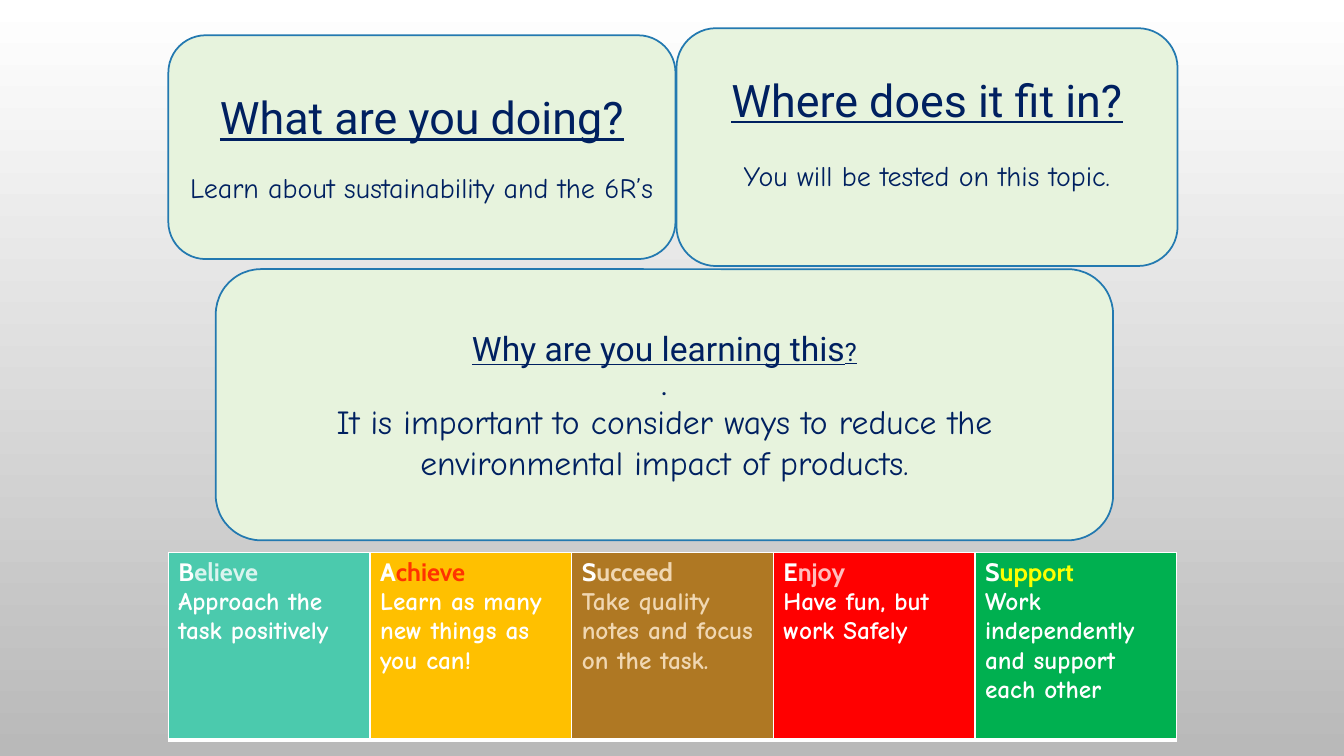
from dataclasses import dataclass

from lxml import etree
from pptx import Presentation
from pptx.dml.color import RGBColor
from pptx.enum.shapes import MSO_SHAPE
from pptx.enum.text import MSO_ANCHOR, PP_ALIGN
from pptx.oxml.ns import qn
from pptx.util import Inches, Pt

ROUNDED = MSO_SHAPE.ROUNDED_RECTANGLE
MIDDLE = MSO_ANCHOR.MIDDLE
CENTER = PP_ALIGN.CENTER

HEADING_FONT = "Roboto"
BODY_FONT = "Comic Neue"
VALUE_FONT = "Cabin"
NAVY = "002060"
WHITE = "FFFFFF"
PANEL_FILL = "E7F3DD"
PANEL_LINE = "2379B0"


@dataclass
class Span:
    text: str
    size: float
    font: str = HEADING_FONT
    color: str = NAVY
    underline: bool = False
    bold: bool = False


@dataclass
class Line:
    spans: list[Span]
    space_before: float = 0


@dataclass
class Panel:
    left: float
    top: float
    width: float
    height: float
    lines: list[Line]
    bottom_inset: float = 0.05


@dataclass
class Value:
    word: str
    word_color: str
    advice: str
    fill: str
    advice_color: str = WHITE


PANELS = [
    Panel(1.67, 0.35, 5.03, 2.22, [
        Line([Span("What are you doing?", 32, underline=True)]),
        Line([Span("Learn about sustainability and the 6R’s", 20, BODY_FONT)], 19),
    ]),
    Panel(6.71, 0.28, 4.97, 2.36, [
        Line([Span("Where does it fit in?", 32, underline=True)]),
        Line([Span("You will be tested on this topic.", 20, BODY_FONT)], 23),
    ], bottom_inset=0.34),
    Panel(2.14, 2.67, 8.9, 2.69, [
        Line([Span("Why are you learning this", 24, underline=True),
              Span("?", 18, underline=True)]),
        Line([Span(".", 20)]),
        Line([Span("It is important to consider ways to reduce the "
                   "environmental impact of products.", 24, BODY_FONT)]),
    ]),
]

VALUES = [
    Value("Believe", "DBF4EF", "Approach the task positively", "4BCAAD"),
    Value("Achieve", "FF3300", "Learn as many new things as you can!", "FFC000"),
    Value("Succeed", "F0D7B2", "Take quality notes and focus on the task.",
          "AF7823", advice_color="F0D7B2"),
    Value("Enjoy", "FFBDBD", "Have fun, but work Safely", "FF0000"),
    Value("Support", "FFFF00", "Work independently and support each other", "00B050"),
]


def rgb(color: str) -> RGBColor:
    return RGBColor.from_string(color)


def write_lines(frame, lines: list[Line], align=None) -> None:
    frame.word_wrap = True
    frame.text = "\n".join("" for _ in lines)
    for paragraph, line in zip(frame.paragraphs, lines):
        paragraph.alignment = align
        if line.space_before:
            paragraph.space_before = Pt(line.space_before)
        for span in line.spans:
            run = paragraph.add_run()
            run.text = span.text
            run.font.size = Pt(span.size)
            run.font.name = span.font
            run.font.color.rgb = rgb(span.color)
            run.font.underline = span.underline
            run.font.bold = span.bold


def add_panel(slide, panel: Panel) -> None:
    box = slide.shapes.add_shape(ROUNDED, Inches(panel.left), Inches(panel.top),
                                 Inches(panel.width), Inches(panel.height))
    box.shadow.inherit = False
    box.fill.solid()
    box.fill.fore_color.rgb = rgb(PANEL_FILL)
    box.line.color.rgb = rgb(PANEL_LINE)
    box.line.width = Pt(1.25)
    box.text_frame.vertical_anchor = MIDDLE
    box.text_frame.margin_bottom = Inches(panel.bottom_inset)
    write_lines(box.text_frame, panel.lines, CENTER)


def set_borders(cell) -> None:
    """Give the cell white borders, with a heavier one at the bottom."""
    properties = cell._tc.get_or_add_tcPr()
    for index, (side, width) in enumerate([("L", 1), ("R", 1), ("T", 1), ("B", 3)]):
        border = etree.Element(qn(f"a:ln{side}"), w=str(Pt(width)))
        fill = etree.SubElement(border, qn("a:solidFill"))
        etree.SubElement(fill, qn("a:srgbClr"), val=WHITE)
        properties.insert(index, border)


def add_values_table(slide, values: list[Value]) -> None:
    table = slide.shapes.add_table(1, len(values), Inches(1.67), Inches(5.48),
                                   Inches(10), Inches(1.86)).table
    for cell, value in zip(table.rows[0].cells, values):
        cell.fill.solid()
        cell.fill.fore_color.rgb = rgb(value.fill)
        set_borders(cell)
        initial, rest = value.word[0], value.word[1:]
        write_lines(cell.text_frame, [
            Line([Span(initial, 18, VALUE_FONT, WHITE, bold=True),
                  Span(rest, 18, VALUE_FONT, value.word_color, bold=True)]),
            Line([Span(value.advice, 18, BODY_FONT, value.advice_color, bold=True)]),
        ])


def set_background(slide) -> None:
    fill = slide.background.fill
    fill.gradient()
    fill.gradient_angle = 270
    for stop, color in zip(fill.gradient_stops, (WHITE, "B9B9B9")):
        stop.color.rgb = rgb(color)


def main() -> None:
    presentation = Presentation()
    presentation.slide_width = Inches(13.33)
    presentation.slide_height = Inches(7.5)
    slide = presentation.slides.add_slide(presentation.slide_layouts[6])
    set_background(slide)
    for panel in PANELS:
        add_panel(slide, panel)
    add_values_table(slide, VALUES)
    presentation.save("out.pptx")


if __name__ == "__main__":
    main()
